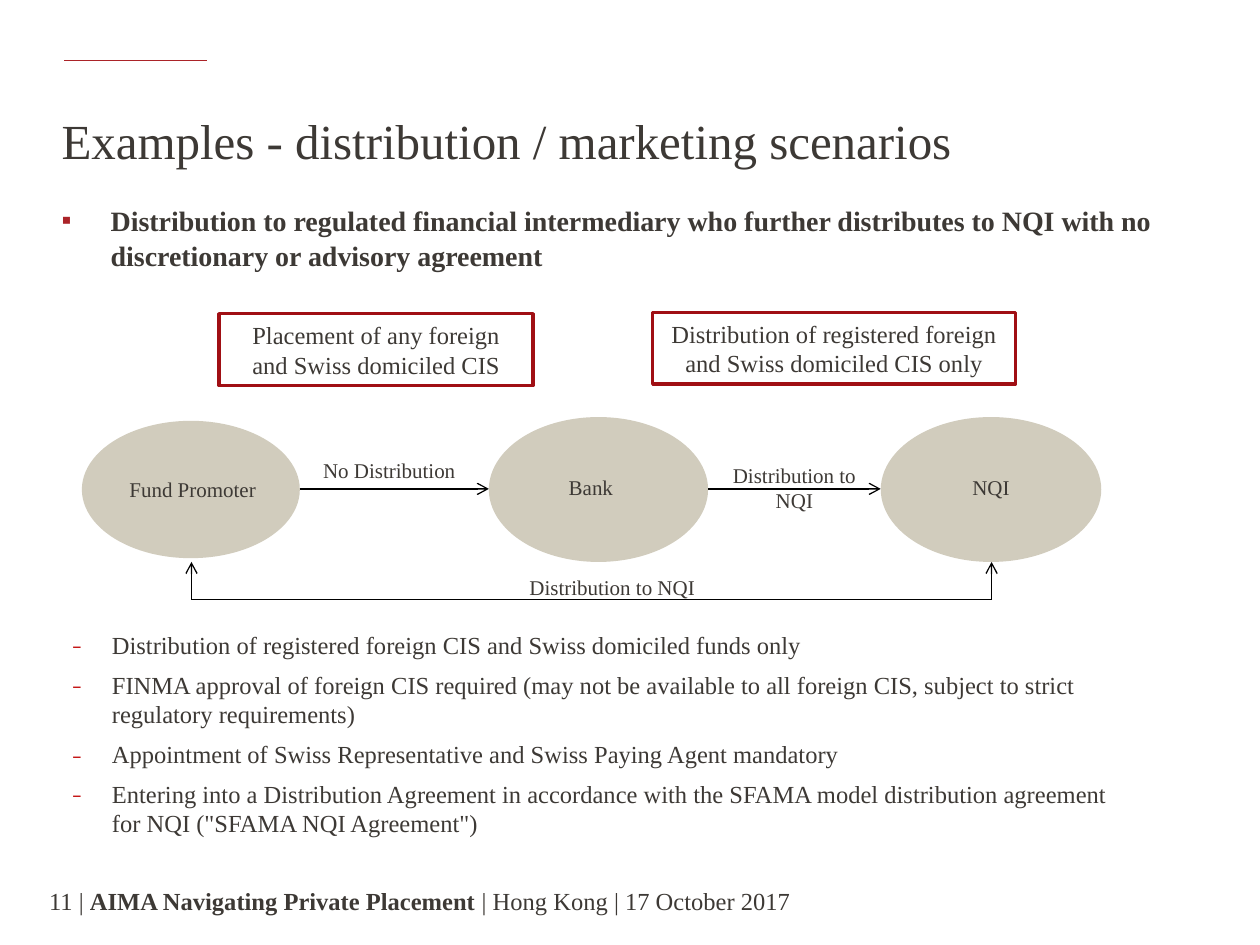
import pptx
import pptx.util
import pptx.dml.color
import pptx.enum.shapes
import pptx.enum.text
import pptx.oxml.ns
import lxml.etree

COLORS = {"ink": "3D3935", "accent": "AB2328", "frame": "A00F14", "dash": "C00000",
          "stone": "D1CCBD", "white": "FFFFFF", "black": "000000"}
FONT = "Times New Roman"
ALIGN = pptx.enum.text.PP_ALIGN
SHAPE = pptx.enum.shapes.MSO_SHAPE
rgb = {name: pptx.dml.color.RGBColor.from_string(value) for name, value in COLORS.items()}
qn = pptx.oxml.ns.qn

deck = pptx.Presentation()
deck.slide_width = pptx.util.Inches(10)
deck.slide_height = pptx.util.Inches(7.5)
column = deck.slide_width / 100
row = deck.slide_height / 75
slide = deck.slides.add_slide(deck.slide_layouts[6])
shapes = slide.shapes


def write(holder, lines, size, align=ALIGN.LEFT, bold=False, bullet=None, indent=0):
    frame = holder.text_frame
    frame.word_wrap = True
    frame.text = "\n".join(lines)
    for paragraph in frame.paragraphs:
        paragraph.alignment = align
        if bullet:
            mark, mark_color = bullet
            properties = paragraph._p.get_or_add_pPr()
            properties.set("marL", str(int(indent * column)))
            properties.set("indent", str(int(-indent * column)))
            color = lxml.etree.SubElement(properties, qn("a:buClr"))
            lxml.etree.SubElement(color, qn("a:srgbClr"), val=COLORS[mark_color])
            lxml.etree.SubElement(properties, qn("a:buFont"), typeface=FONT)
            lxml.etree.SubElement(properties, qn("a:buChar"), char=mark)
            paragraph.space_after = pptx.util.Pt(6)
        for run in paragraph.runs:
            run.font.size = pptx.util.Pt(size)
            run.font.name = FONT
            run.font.bold = bold
            run.font.color.rgb = rgb["ink"]
    return frame


def connect(x1, y1, x2, y2, color="black", width=0.75, arrow=True):
    line = shapes.add_connector(
        pptx.enum.shapes.MSO_CONNECTOR.STRAIGHT,
        int(x1 * column), int(y1 * row), int(x2 * column), int(y2 * row))
    line.line.color.rgb = rgb[color]
    line.line.width = pptx.util.Pt(width)
    if arrow:
        lxml.etree.SubElement(line.line._get_or_add_ln(), qn("a:tailEnd"), type="arrow")
    lxml.etree.SubElement(line._element.spPr, qn("a:effectLst"))


connect(16.4, 4.8, 5.1, 4.8, "accent", 1, arrow=False)

title = shapes.add_textbox(int(3.9 * column), int(9.1 * row), int(91.4 * column), int(7.8 * row))
heading = write(title, ["Examples - distribution / marketing scenarios"], 28)
heading.paragraphs[0].line_spacing = pptx.util.Pt(27.7)

scenario = shapes.add_textbox(int(3.9 * column), int(15.5 * row), int(91.4 * column), int(7 * row))
summary = write(scenario, [
    "Distribution to regulated financial intermediary who further distributes to NQI "
    "with no discretionary or advisory agreement"], 16, bold=True, bullet=("▪", "accent"), indent=3.9)
summary.paragraphs[0].line_spacing = 1.05

for left, top, width, height in [(6.5, 33.4, 17.3, 10.9), (38.8, 33.1, 17.4, 11.5),
                                 (69.9, 33.1, 17.5, 11.5)]:
    party = shapes.add_shape(SHAPE.OVAL, int(left * column), int(top * row),
                             int(width * column), int(height * row))
    party.shadow.inherit = False
    party.fill.solid()
    party.fill.fore_color.rgb = rgb["stone"]
    party.line.fill.background()

connect(23.8, 38.8, 38.8, 38.8)
connect(56.2, 38.8, 69.9, 38.8)
connect(15.2, 47.6, 78.7, 47.6, arrow=False)
for party_middle in (15.2, 78.7):
    connect(party_middle, 47.6, party_middle, 44.6)

for label, left, top, width, height in [
        ("Fund Promoter", 8.6, 37.3, 13.4, 3),
        ("Bank", 43.7, 37.2, 6.4, 3),
        ("NQI", 72.5, 37.2, 12.3, 3),
        ("No Distribution", 24.6, 35.8, 12.6, 3),
        ("Distribution to NQI", 56.7, 36.2, 12.7, 5),
        ("Distribution to NQI", 29.3, 45.1, 38.6, 3)]:
    caption = shapes.add_textbox(int(left * column), int(top * row),
                                 int(width * column), int(height * row))
    write(caption, [label], 12, ALIGN.CENTER)

for lines, left, top, width in [
        (["Placement of any foreign", "and Swiss domiciled CIS"], 17.4, 24.9, 24.9),
        (["Distribution of registered foreign", "and Swiss domiciled CIS only"], 51.8, 24.8, 28.8)]:
    rule = shapes.add_shape(SHAPE.RECTANGLE, int(left * column), int(top * row),
                            int(width * column), int(5.7 * row))
    rule.shadow.inherit = False
    rule.fill.solid()
    rule.fill.fore_color.rgb = rgb["white"]
    rule.line.color.rgb = rgb["frame"]
    rule.line.width = pptx.util.Pt(2)
    write(rule, lines, 14, ALIGN.CENTER)

requirements = shapes.add_textbox(int(4.8 * column), int(49.5 * row),
                                  int(84.2 * column), int(17.7 * row))
write(requirements, [
    "Distribution of registered foreign CIS and Swiss domiciled funds only",
    "FINMA approval of foreign CIS required (may not be available to all foreign CIS, "
    "subject to strict regulatory requirements)",
    "Appointment of Swiss Representative and Swiss Paying Agent mandatory",
    "Entering into a Distribution Agreement in accordance with the SFAMA model distribution "
    'agreement for NQI ("SFAMA NQI Agreement")'], 14, bullet=("˗", "dash"), indent=3.1)

footer = shapes.add_textbox(int(3.9 * column), int(70.3 * row), int(63.4 * column), int(2.3 * row))
imprint = write(footer, ["11 | "], 14)
imprint.margin_left = imprint.margin_top = imprint.margin_bottom = 0
imprint.vertical_anchor = pptx.enum.text.MSO_ANCHOR.MIDDLE
for part, bold in [("AIMA Navigating Private Placement ", True),
                   ("| Hong Kong | 17 October 2017", False)]:
    run = imprint.paragraphs[0].add_run()
    run.text = part
    run.font.size = pptx.util.Pt(14)
    run.font.name = FONT
    run.font.bold = bold
    run.font.color.rgb = rgb["ink"]

deck.save("out.pptx")
